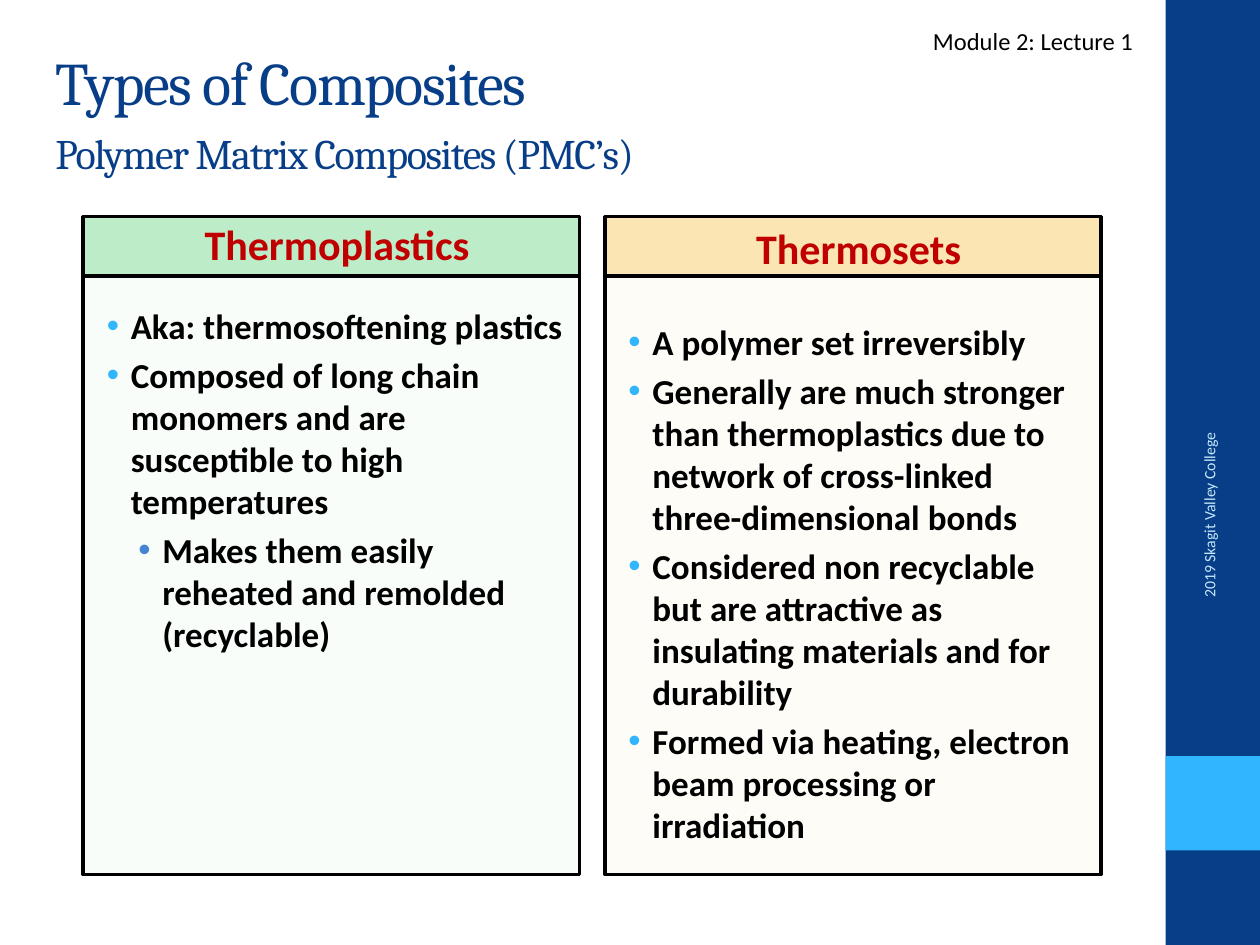
from lxml.etree import SubElement
from pptx import Presentation
from pptx.dml.color import RGBColor
from pptx.enum.shapes import MSO_SHAPE
from pptx.enum.text import MSO_ANCHOR, PP_ALIGN
from pptx.oxml.ns import qn
from pptx.util import Inches, Pt

COLORS = {
    "navy": "073E87", "sky": "31B6FD", "blue": "4584D3", "pale": "C6E7FC",
    "black": "000000", "red": "C00000",
    "green_head": "BDECC9", "green_body": "DEF6E4",
    "amber_head": "FBE6B3", "amber_body": "FDF2D9",
}
GRID_COLUMNS, GRID_ROWS = 100, 75
PANEL_TOP, PANEL_WIDTH, PANEL_HEIGHT, HEAD_HEIGHT = 17.2, 39.4, 52.2, 4.7
PANELS = [
    dict(left=6.6, text_top=17.6, tint="green", heading="Thermoplastics", gap=20.5, points=[
        (0, "Aka: thermosoftening plastics"),
        (0, "Composed of long chain monomers and are susceptible to high temperatures"),
        (1, "Makes them easily reheated and remolded (recyclable)"),
    ]),
    dict(left=48, text_top=17.9, tint="amber", heading="Thermosets", gap=27.5, points=[
        (0, "A polymer set irreversibly"),
        (0, "Generally are much stronger than thermoplastics due to network of "
            "cross-linked three-dimensional bonds"),
        (0, "Considered non recyclable but are attractive as insulating materials "
            "and for durability"),
        (0, "Formed via heating, electron beam processing or irradiation"),
    ]),
]


class SlideBuilder:
    """Draws styled elements on one slide, placed by grid columns and rows."""

    def __init__(self, deck):
        self.cell_width = deck.slide_width / GRID_COLUMNS
        self.cell_height = deck.slide_height / GRID_ROWS
        self.slide = deck.slides.add_slide(deck.slide_layouts[5])

    def place(self, left, top, width, height):
        return (int(left * self.cell_width), int(top * self.cell_height),
                int(width * self.cell_width), int(height * self.cell_height))

    def style(self, paragraph, size, color, face="Calibri", bold=False):
        font = paragraph.font
        font.name, font.size, font.bold = face, Pt(size), bold
        font.color.rgb = RGBColor.from_string(COLORS[color])

    def block(self, box, color, outlined=False, opacity=100):
        block = self.slide.shapes.add_shape(MSO_SHAPE.RECTANGLE, *self.place(*box))
        block.shadow.inherit = False
        block.fill.solid()
        block.fill.fore_color.rgb = RGBColor.from_string(COLORS[color])
        if opacity < 100:
            tint = block.fill._xPr.find(qn("a:solidFill"))[0]
            SubElement(tint, qn("a:alpha"), val=str(opacity * 1000))
        if outlined:
            block.line.color.rgb = RGBColor.from_string(COLORS["black"])
            block.line.width = Pt(2)
        else:
            block.line.fill.background()

    def text_box(self, box):
        holder = self.slide.shapes.add_textbox(*self.place(*box))
        holder.text_frame.word_wrap = True
        return holder

    def label(self, box, text, size, color, align, rotation=0, anchor=MSO_ANCHOR.TOP):
        holder = self.text_box(box)
        holder.rotation = rotation
        holder.text_frame.vertical_anchor = anchor
        line = holder.text_frame.paragraphs[0]
        line.text, line.alignment = text, align
        self.style(line, size, color)

    def headline(self, holder, text, size):
        frame = holder.text_frame
        frame.word_wrap, frame.vertical_anchor = True, MSO_ANCHOR.MIDDLE
        line = frame.paragraphs[0]
        line.text, line.alignment = text, PP_ALIGN.LEFT
        self.style(line, size, "navy", "Cambria")
        line.runs[0].font._element.set("spc", "-80")

    def title(self, box, text, size):
        holder = self.slide.shapes.title
        holder.left, holder.top, holder.width, holder.height = self.place(*box)
        self.headline(holder, text, size)

    def bullet(self, paragraph, level):
        paragraph.level = level
        properties = paragraph._p.get_or_add_pPr()
        properties.set("marL", str(Inches((0.28, 0.53)[level])))
        properties.set("indent", str(Inches(-0.19)))
        tone = SubElement(properties, qn("a:buClr"))
        SubElement(tone, qn("a:srgbClr"), val=COLORS[("sky", "blue")[level]])
        SubElement(properties, qn("a:buFont"), typeface="Arial")
        SubElement(properties, qn("a:buChar"), char="•")

    def panel(self, left, text_top, tint, heading, gap, points):
        self.block((left, PANEL_TOP, PANEL_WIDTH, PANEL_HEIGHT), f"{tint}_body", True, 20)
        self.block((left, PANEL_TOP, PANEL_WIDTH, HEAD_HEIGHT), f"{tint}_head", True)
        frame = self.text_box((left, text_top, PANEL_WIDTH, 51.5)).text_frame
        head = frame.paragraphs[0]
        head.text, head.alignment, head.line_spacing = heading, PP_ALIGN.CENTER, 0.8
        head._p.get_or_add_pPr().set("marL", str(Inches(0.09)))
        self.style(head, 24, "red", bold=True)
        for index, (level, text) in enumerate(points):
            point = frame.add_paragraph()
            point.text = text
            point.space_before = Pt(4 if index else gap)
            self.bullet(point, level)
            self.style(point, 20, "black", bold=True)


def main():
    deck = Presentation()
    deck.slide_width, deck.slide_height = Inches(10), Inches(7.5)
    builder = SlideBuilder(deck)
    builder.block((92.5, 0, 7.5, 75), "navy")
    builder.block((92.5, 60, 7.5, 7.5), "sky")
    for panel in PANELS:
        builder.panel(**panel)
    builder.title((3.4, 5.9, 76.8, 12.5), "Polymer Matrix Composites (PMC’s)", 24)
    builder.label((70.3, 1.6, 23.4, 3.4), "Module 2: Lecture 1", 14, "black", PP_ALIGN.CENTER)
    builder.headline(builder.text_box((3.4, 0.2, 83.3, 12.5)), "Types of Composites", 34.5)
    builder.label((83, 44.3, 25.9, 4), "2019 Skagit Valley College", 9, "pale",
                  PP_ALIGN.RIGHT, 270, MSO_ANCHOR.MIDDLE)
    deck.save("out.pptx")


if __name__ == "__main__":
    main()
